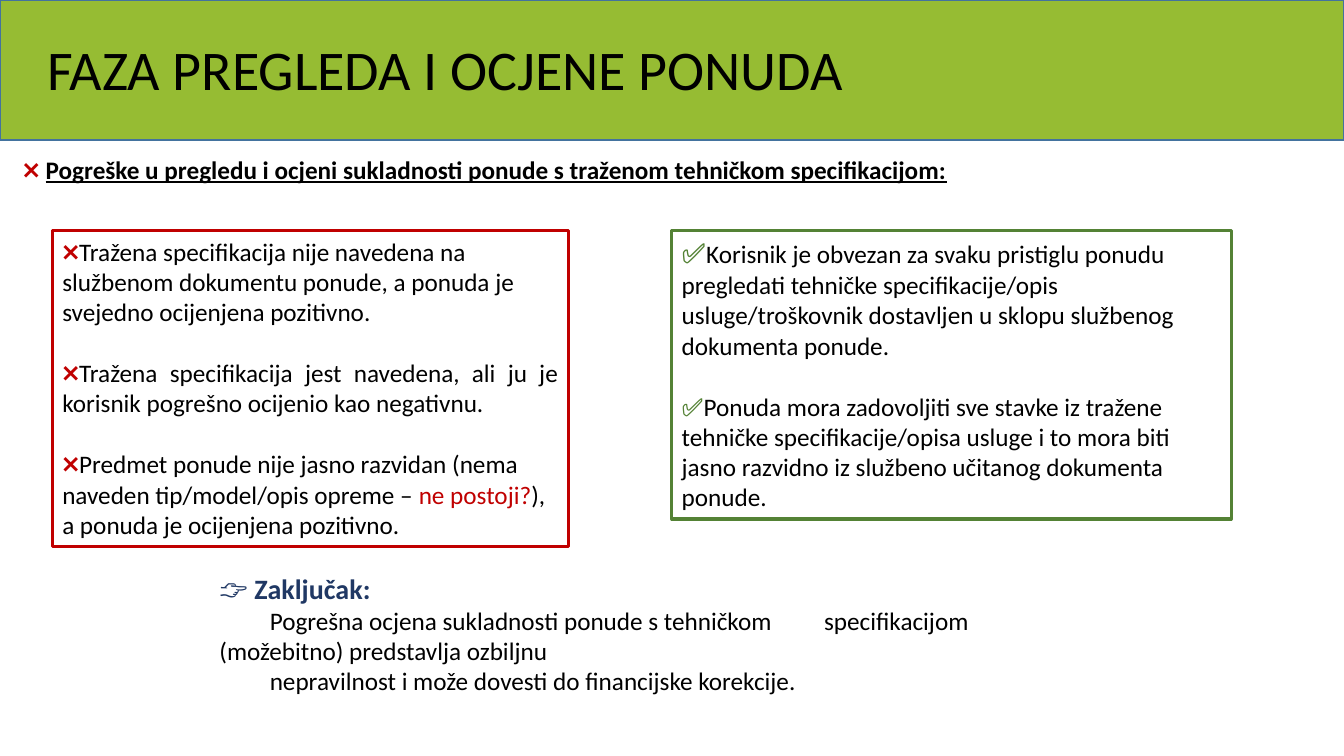
"""Build the slide on errors in checking offers against the specification."""
from dataclasses import dataclass

from pptx import Presentation
from pptx.dml.color import RGBColor
from pptx.enum.shapes import MSO_SHAPE
from pptx.enum.text import MSO_ANCHOR, MSO_AUTO_SIZE, PP_ALIGN
from pptx.shapes.autoshape import Shape
from pptx.slide import Slide
from pptx.util import Cm, Pt

RECTANGLE = MSO_SHAPE.RECTANGLE
TOP, MIDDLE = MSO_ANCHOR.TOP, MSO_ANCHOR.MIDDLE
FIT_SHAPE, FIXED_SIZE = MSO_AUTO_SIZE.SHAPE_TO_FIT_TEXT, MSO_AUTO_SIZE.NONE
LEFT, JUSTIFY = PP_ALIGN.LEFT, PP_ALIGN.JUSTIFY

BLACK = RGBColor(0x00, 0x00, 0x00)
RED = RGBColor(0xC0, 0x00, 0x00)
GREEN = RGBColor(0x54, 0x82, 0x35)
NAVY = RGBColor(0x20, 0x38, 0x64)
BAND_FILL = RGBColor(0x96, 0xBC, 0x33)
BAND_LINE = RGBColor(0x43, 0x73, 0x9E)

FONT = "Calibri"
ITEM_GAP = 22


@dataclass(frozen=True)
class Span:
    text: str
    color: RGBColor = BLACK
    size: float = 18
    bold: bool = False
    underline: bool = False
    break_after: bool = False


@dataclass(frozen=True)
class Line:
    spans: tuple[Span, ...]
    align: PP_ALIGN = LEFT
    space_before: float = 0
    line_spacing: float = 1.0


@dataclass(frozen=True)
class Block:
    left: float
    top: float
    width: float
    height: float
    lines: tuple[Line, ...]
    border: RGBColor | None = None
    anchor: MSO_ANCHOR = TOP
    auto_size: MSO_AUTO_SIZE = FIT_SHAPE
    wrap: bool = True


TITLE = Block(
    0.94, 0.69, 32, 2.26,
    (Line((Span("FAZA PREGLEDA I OCJENE PONUDA", size=40),), line_spacing=0.9),),
    anchor=MIDDLE, auto_size=FIXED_SIZE,
)
HEADING = Block(
    0.33, 3.76, 24.51, 1.02,
    (Line((
        Span("❌ ", RED, bold=True),
        Span("Pogreške u pregledu i ocjeni sukladnosti ponude s traženom "
             "tehničkom specifikacijom:", bold=True, underline=True),
    )),),
    wrap=False,
)
ERRORS = Block(
    1.32, 5.82, 13, 7.95,
    (
        Line((
            Span("❌", RED),
            Span("Tražena specifikacija nije navedena na službenom dokumentu "
                 "ponude, a ponuda je svejedno ocijenjena pozitivno."),
        )),
        Line((
            Span("❌", RED),
            Span("Tražena specifikacija jest navedena, ali ju je korisnik "
                 "pogrešno ocijenio kao negativnu."),
        ), JUSTIFY, ITEM_GAP),
        Line((
            Span("❌", RED),
            Span("Predmet ponude nije jasno razvidan (nema naveden "
                 "tip/model/opis opreme – "),
            Span("ne postoji?", RED),
            Span("), a ponuda je ocijenjena pozitivno."),
        ), space_before=ITEM_GAP),
    ),
    border=RED,
)
DUTIES = Block(
    16.93, 5.82, 14.1, 7.26,
    (
        Line((
            Span("✅", GREEN, 20),
            Span("Korisnik je obvezan za svaku pristiglu ponudu pregledati "
                 "tehničke specifikacije/opis usluge/troškovnik dostavljen u "
                 "sklopu službenog dokumenta ponude."),
        )),
        Line((
            Span("✅", GREEN),
            Span("Ponuda mora zadovoljiti sve stavke iz tražene tehničke "
                 "specifikacije/opisa usluge i to mora biti jasno razvidno iz "
                 "službeno učitanog dokumenta ponude."),
        ), space_before=ITEM_GAP),
    ),
    border=GREEN,
)
CONCLUSION = Block(
    5.28, 14.27, 21.03, 3.51,
    (
        Line((
            Span("👉 ", NAVY, 20),
            Span("Zaključak:", NAVY, 20, bold=True, break_after=True),
            Span("\tPogrešna ocjena sukladnosti ponude s tehničkom "
                 "\tspecifikacijom (možebitno) predstavlja ozbiljnu"),
        )),
        Line((Span("\tnepravilnost i može dovesti do financijske korekcije."),)),
    ),
)


def add_band(slide: Slide) -> None:
    """Draw the green band behind the title."""
    band = slide.shapes.add_shape(RECTANGLE, 0, 0, Cm(33.87), Cm(3.53))
    band.shadow.inherit = False
    band.fill.solid()
    band.fill.fore_color.rgb = BAND_FILL
    band.line.color.rgb = BAND_LINE
    band.line.width = Pt(1)


def write_lines(shape: Shape, lines: tuple[Line, ...]) -> None:
    """Write the lines into the shape, one paragraph each."""
    frame = shape.text_frame
    for index, line in enumerate(lines):
        paragraph = frame.add_paragraph() if index else frame.paragraphs[0]
        paragraph.alignment = line.align
        paragraph.line_spacing = line.line_spacing
        if line.space_before:
            paragraph.space_before = Pt(line.space_before)
        for span in line.spans:
            run = paragraph.add_run()
            run.text = span.text
            run.font.name = FONT
            run.font.size = Pt(span.size)
            run.font.bold = span.bold
            run.font.underline = span.underline
            run.font.color.rgb = span.color
            if span.break_after:
                paragraph.add_line_break()


def add_block(slide: Slide, block: Block) -> None:
    """Add a text block, framed when it has a border colour."""
    bounds = [Cm(value) for value in (block.left, block.top, block.width, block.height)]
    if block.border is None:
        shape = slide.shapes.add_textbox(*bounds)
    else:
        shape = slide.shapes.add_shape(RECTANGLE, *bounds)
        shape.shadow.inherit = False
        shape.fill.background()
        shape.line.color.rgb = block.border
        shape.line.width = Pt(2.25)
    frame = shape.text_frame
    frame.word_wrap = block.wrap
    frame.auto_size = block.auto_size
    frame.vertical_anchor = block.anchor
    write_lines(shape, block.lines)


def main() -> None:
    """Create and save the presentation."""
    presentation = Presentation()
    presentation.slide_width = Cm(33.87)
    presentation.slide_height = Cm(19.05)
    slide = presentation.slides.add_slide(presentation.slide_layouts[6])
    add_band(slide)
    for block in (CONCLUSION, DUTIES, ERRORS, TITLE, HEADING):
        add_block(slide, block)
    presentation.save("out.pptx")


if __name__ == "__main__":
    main()
